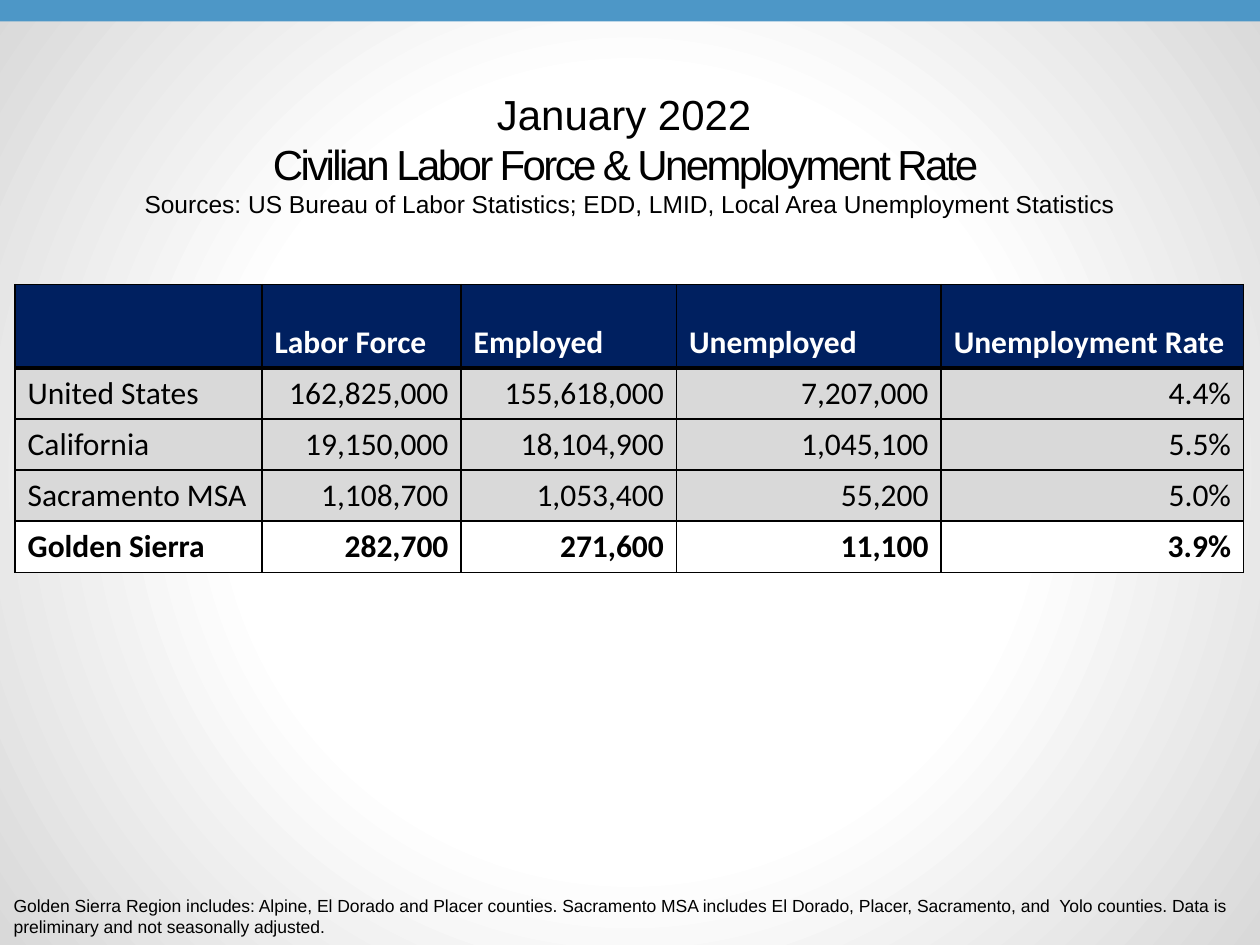
"""Build the January 2022 labor force and unemployment slide."""
import dataclasses
import typing

import pptx
import pptx.dml.color
import pptx.enum.shapes
import pptx.enum.text
import pptx.oxml
import pptx.oxml.ns
import pptx.util

WIDTH, HEIGHT = pptx.util.Inches(10), pptx.util.Inches(7.5)
COLOURS = {"banner": "4D97C7", "header": "002060", "region": "D9D9D9",
           "white": "FFFFFF", "black": "000000"}
COLUMN_WIDTHS = (1.96, 1.58, 1.71, 2.1, 2.4)
HEADER_HEIGHT, BODY_HEIGHT = 0.66, 0.4
ALIGN = pptx.enum.text.PP_ALIGN
ANCHOR = pptx.enum.text.MSO_ANCHOR


@dataclasses.dataclass(frozen=True)
class Line:
    text: str
    size: float
    spacing: int = 0


@dataclasses.dataclass(frozen=True)
class TextBlock:
    left: float
    top: float
    width: float
    height: float
    align: ALIGN
    lines: tuple[Line, ...]


@dataclasses.dataclass(frozen=True)
class TableRow:
    texts: tuple[str, ...]
    fill: str = "region"
    colour: str = "black"
    bold: bool = False
    header: bool = False


TEXT_BLOCKS = (
    TextBlock(0, 0.087, 1, 0.152, ALIGN.CENTER, (
        Line("January 2022 ", 24),
        Line("Civilian Labor Force & Unemployment Rate ", 24, -150),
        Line("Sources: US Bureau of Labor Statistics; EDD, LMID, "
             "Local Area Unemployment Statistics", 14))),
    TextBlock(0.001, 0.941, 1, 0.059, ALIGN.LEFT, (
        Line("Golden Sierra Region includes: Alpine, El Dorado and Placer counties. "
             "Sacramento MSA includes El Dorado, Placer, Sacramento, and  Yolo counties. "
             "Data is preliminary and not seasonally adjusted.", 10),)),
)
ROWS = (
    TableRow(("", "Labor Force", "Employed", "Unemployed", "Unemployment Rate"),
             "header", "white", True, True),
    TableRow(("United States", "162,825,000", "155,618,000", "7,207,000", "4.4%")),
    TableRow(("California", "19,150,000", "18,104,900", "1,045,100", "5.5%")),
    TableRow(("Sacramento MSA", "1,108,700", "1,053,400", "55,200", "5.0%")),
    TableRow(("Golden Sierra", "282,700", "271,600", "11,100", "3.9%"), "white", bold=True),
)


def rgb(name: str) -> pptx.dml.color.RGBColor:
    return pptx.dml.color.RGBColor.from_string(COLOURS[name])


def set_font(font: typing.Any, face: str, size: float, colour: str, bold: bool = False) -> None:
    font.name, font.size, font.bold = face, pptx.util.Pt(size), bold
    font.color.rgb = rgb(colour)


def paint_background(page: typing.Any) -> None:
    page.background.fill.solid()
    solid = page.element.xpath("p:cSld/p:bg/p:bgPr/a:solidFill")[0]
    stops = "".join(f'<a:gs pos="{share * 1000}"><a:srgbClr val="{COLOURS[name]}"/></a:gs>'
                    for share, name in ((0, "white"), (50, "white"), (100, "region")))
    gradient = pptx.oxml.parse_xml(
        f'<a:gradFill {pptx.oxml.ns.nsdecls("a")} rotWithShape="1"><a:gsLst>{stops}</a:gsLst>'
        '<a:path path="circle"><a:fillToRect l="50000" t="50000" r="50000" b="50000"/>'
        '</a:path></a:gradFill>')
    solid.getparent().replace(solid, gradient)


def add_banner(page: typing.Any) -> None:
    banner = page.shapes.add_shape(pptx.enum.shapes.MSO_SHAPE.RECTANGLE,
                                   0, 0, WIDTH, pptx.util.Inches(0.17))
    banner.shadow.inherit = False
    banner.fill.solid()
    banner.fill.fore_color.rgb = rgb("banner")
    banner.line.fill.background()


def add_text(page: typing.Any, block: TextBlock) -> None:
    box = page.shapes.add_textbox(int(block.left * WIDTH), int(block.top * HEIGHT),
                                  int(block.width * WIDTH), int(block.height * HEIGHT))
    frame = box.text_frame
    frame.word_wrap = True
    frame.auto_size = pptx.enum.text.MSO_AUTO_SIZE.SHAPE_TO_FIT_TEXT
    for index, line in enumerate(block.lines):
        para = frame.add_paragraph() if index else frame.paragraphs[0]
        para.alignment = block.align
        set_font(para.font, "Arial", line.size, "black")
        span = para.add_run()
        span.text = line.text
        if line.spacing:
            span.font._element.set("spc", str(line.spacing))


def set_borders(cell: typing.Any, points: dict[str, float]) -> None:
    properties = cell._tc.get_or_add_tcPr()
    for index, (side, width) in enumerate(points.items()):
        properties.insert(index, pptx.oxml.parse_xml(
            f'<a:ln{side} {pptx.oxml.ns.nsdecls("a")} w="{pptx.util.Pt(width)}"><a:solidFill>'
            f'<a:srgbClr val="{COLOURS["black"]}"/></a:solidFill></a:ln{side}>'))


def fill_cell(cell: typing.Any, row: TableRow, column: int, top_width: float) -> None:
    cell.fill.solid()
    cell.fill.fore_color.rgb = rgb(row.fill)
    cell.vertical_anchor = ANCHOR.BOTTOM if row.header or column else ANCHOR.TOP
    set_borders(cell, {"L": 1, "R": 1, "T": top_width, "B": 3 if row.header else 1})
    para = cell.text_frame.paragraphs[0]
    para.alignment = ALIGN.RIGHT if column and not row.header else ALIGN.LEFT
    set_font(para.font, "Calibri", 18, row.colour, row.bold)
    if row.texts[column]:
        para.add_run().text = row.texts[column]


def add_labor_table(page: typing.Any) -> None:
    heights = [HEADER_HEIGHT if row.header else BODY_HEIGHT for row in ROWS]
    table = page.shapes.add_table(
        len(ROWS), len(COLUMN_WIDTHS), pptx.util.Inches(0.12), pptx.util.Inches(2.26),
        pptx.util.Inches(sum(COLUMN_WIDTHS)), pptx.util.Inches(sum(heights))).table
    table.horz_banding = False
    for column, width in enumerate(COLUMN_WIDTHS):
        table.columns[column].width = pptx.util.Inches(width)
    for index, row in enumerate(ROWS):
        table.rows[index].height = pptx.util.Inches(heights[index])
        for column in range(len(COLUMN_WIDTHS)):
            fill_cell(table.cell(index, column), row, column, 3 if index == 1 else 1)


def main() -> None:
    deck = pptx.Presentation()
    deck.slide_width, deck.slide_height = WIDTH, HEIGHT
    page = deck.slides.add_slide(deck.slide_layouts[6])
    paint_background(page)
    add_banner(page)
    add_labor_table(page)
    for block in TEXT_BLOCKS:
        add_text(page, block)
    deck.save("out.pptx")


if __name__ == "__main__":
    main()
